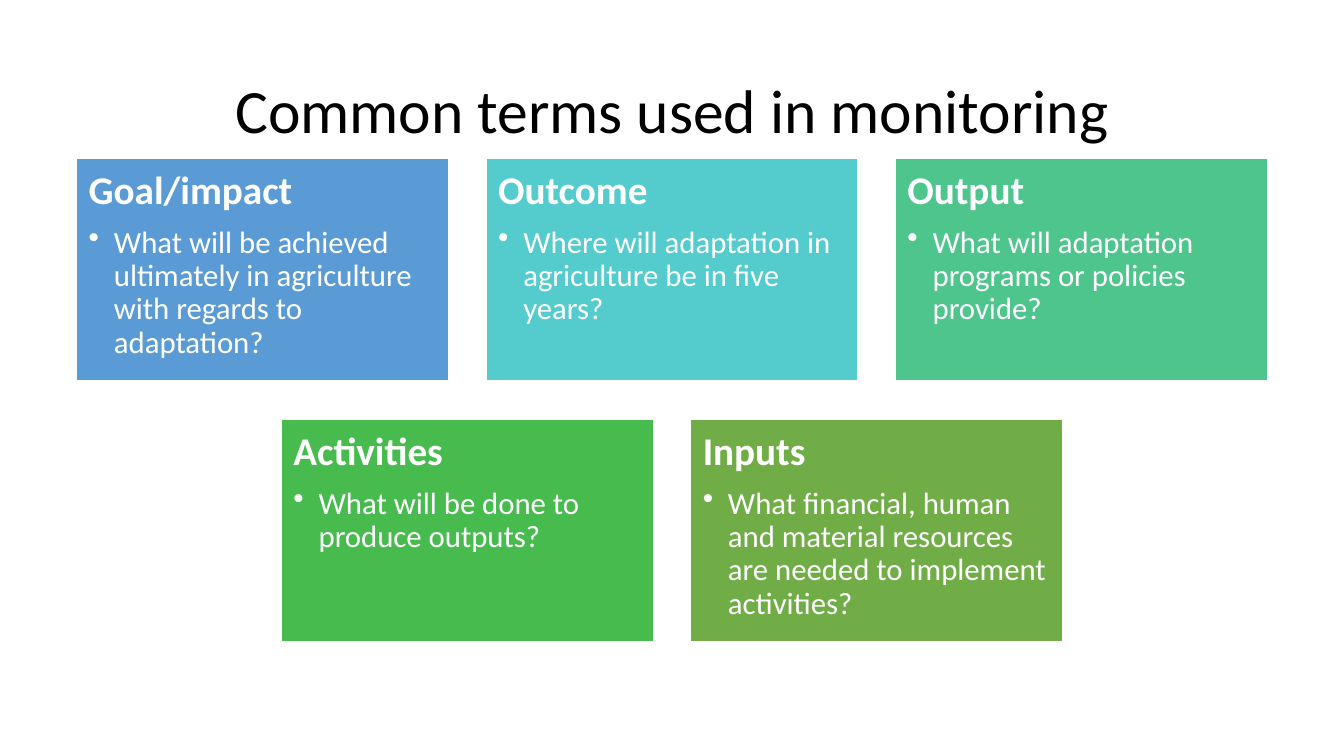
"""Build a slide of common monitoring terms as two centred rows of cards."""
from lxml import etree
from pptx import Presentation
from pptx.dml.color import RGBColor
from pptx.enum.shapes import MSO_SHAPE
from pptx.enum.text import MSO_ANCHOR, PP_ALIGN
from pptx.oxml.ns import qn
from pptx.util import Inches, Pt

RECT = MSO_SHAPE.RECTANGLE
TOP, MIDDLE = MSO_ANCHOR.TOP, MSO_ANCHOR.MIDDLE
LEFT, CENTER = PP_ALIGN.LEFT, PP_ALIGN.CENTER

TITLE = "Common terms used in monitoring"
ROWS = [
    [
        ("Goal/impact", "What will be achieved ultimately in agriculture with regards to adaptation?", "5B9BD5"),
        ("Outcome", "Where will adaptation in agriculture be in five years?", "54CCCD"),
        ("Output", "What will adaptation programs or policies provide?", "4DC58D"),
    ],
    [
        ("Activities", "What will be done to produce outputs?", "48BB4F"),
        ("Inputs", "What financial, human and material resources are needed to implement activities?", "70AD47"),
    ],
]
FONT = "Calibri"
WHITE, BLACK = "FFFFFF", "000000"
CARD_W, CARD_H = 3.69, 2.21
STEP_X, STEP_Y = 4.06, 2.59
ROWS_TOP, ROWS_CENTER = 1.57, 6.665
INSET, INDENT = 0.12, 0.25


def rgb(value):
    return RGBColor.from_string(value)


def write(p, text, size, color=WHITE, bold=False, align=LEFT, after=0, bullet=False):
    p.alignment = align
    p.line_spacing = 0.9
    p.space_after = Pt(after)
    if bullet:
        pPr = p._p.get_or_add_pPr()
        pPr.set("marL", str(Inches(INDENT)))
        pPr.set("indent", str(-Inches(INDENT)))
        etree.SubElement(pPr, qn("a:buChar")).set("char", "•")
    r = p.add_run()
    r.text = text
    r.font.name = FONT
    r.font.size = Pt(size)
    r.font.bold = bold
    r.font.color.rgb = rgb(color)


def add_card(s, x, y, term, question, fill):
    sp = s.shapes.add_shape(RECT, Inches(x), Inches(y), Inches(CARD_W), Inches(CARD_H))
    sp.shadow.inherit = False
    sp.fill.solid()
    sp.fill.fore_color.rgb = rgb(fill)
    sp.line.color.rgb = rgb(WHITE)
    sp.line.width = Pt(1)
    tf = sp.text_frame
    tf.word_wrap = True
    tf.vertical_anchor = TOP
    tf.margin_left = tf.margin_right = tf.margin_top = tf.margin_bottom = Inches(INSET)
    write(tf.paragraphs[0], term, 28, bold=True, after=10)
    write(tf.add_paragraph(), question, 22, after=4, bullet=True)


def main():
    prs = Presentation()
    prs.slide_width, prs.slide_height = Inches(13.33), Inches(7.5)
    s = prs.slides.add_slide(prs.slide_layouts.get_by_name("Title Only"))
    title = s.shapes.title
    title.left, title.top = Inches(0.92), Inches(0.4)
    title.width, title.height = Inches(11.5), Inches(1.45)
    title.text_frame.vertical_anchor = MIDDLE
    write(title.text_frame.paragraphs[0], TITLE, 44, color=BLACK, align=CENTER)

    for i, row in enumerate(ROWS):
        row_w = CARD_W + (len(row) - 1) * STEP_X
        x0 = ROWS_CENTER - row_w / 2
        for j, card in enumerate(row):
            add_card(s, x0 + j * STEP_X, ROWS_TOP + i * STEP_Y, *card)
    prs.save("out.pptx")


if __name__ == "__main__":
    main()
